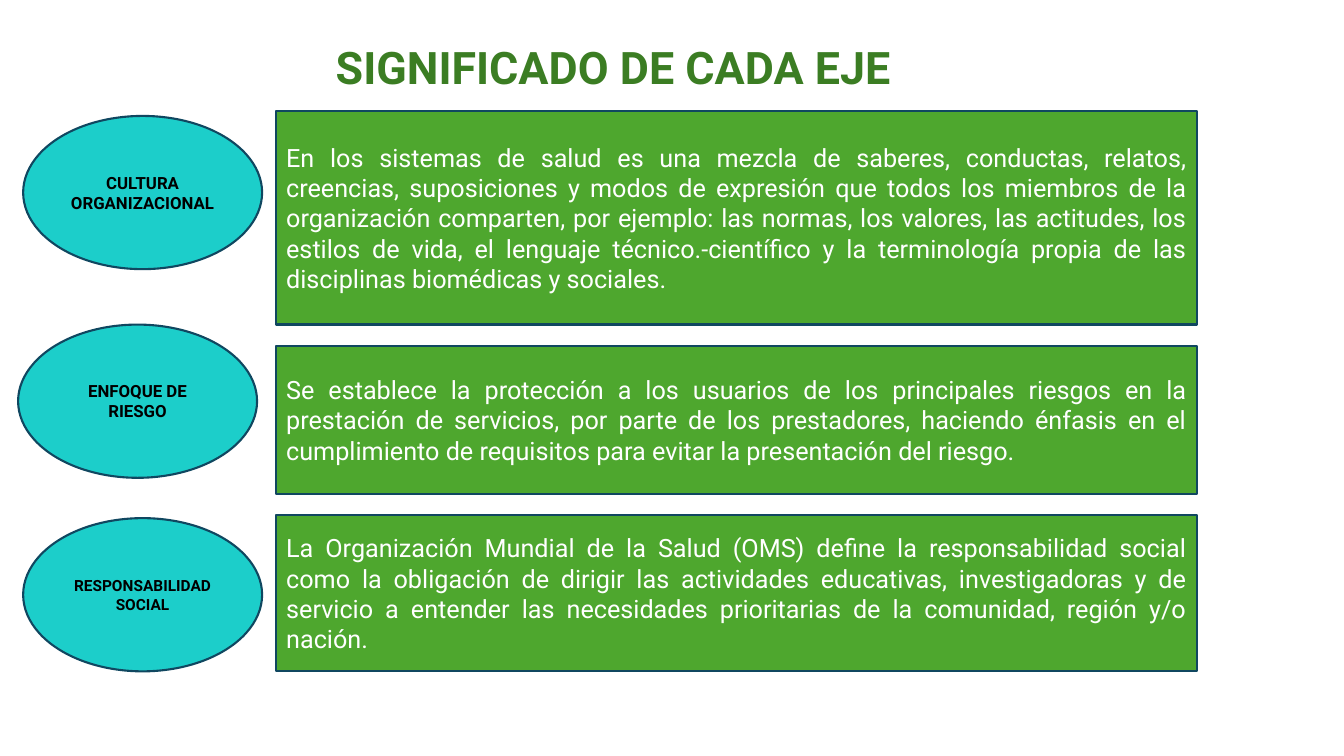
from dataclasses import dataclass

from pptx import Presentation
from pptx import util as u
from pptx.dml.color import RGBColor
from pptx.enum import shapes, text
from pptx.slide import Slide
from pptx.text.text import TextFrame

SCALE = 9144


@dataclass(frozen=True)
class Theme:
    font: str = "Roboto"
    title: str = "3B7D23"
    oval: str = "1CCECA"
    panel: str = "4EA72E"
    edge: str = "104760"
    dark: str = "000000"
    light: str = "FFFFFF"
    head: int = 32
    body: int = 18
    label: int = 12
    small: int = 11
    stroke: float = 1.5


@dataclass(frozen=True)
class Box:
    left: int
    top: int
    width: int
    height: int

    def emu(self) -> tuple[int, int, int, int]:
        return (self.left * SCALE, self.top * SCALE,
                self.width * SCALE, self.height * SCALE)


@dataclass(frozen=True)
class Axis:
    name: str
    size: int
    oval: Box
    sense: str
    panel: Box


THEME = Theme()


def oval_at(left: int, top: int) -> Box:
    return Box(left, top, 237, 152)


def panel_at(top: int, height: int) -> Box:
    return Box(274, top, 913, height)


AXES = [
    Axis("CULTURA ORGANIZACIONAL", THEME.label, oval_at(23, 115),
         "En los sistemas de salud es una mezcla de saberes, conductas, relatos, "
         "creencias, suposiciones y modos de expresión que todos los miembros de la "
         "organización comparten, por ejemplo: las normas, los valores, las actitudes, "
         "los estilos de vida, el lenguaje técnico.-científico y la terminología propia "
         "de las disciplinas biomédicas y sociales.",
         panel_at(110, 212)),
    Axis("ENFOQUE DE RIESGO", THEME.label, oval_at(18, 322),
         "Se establece la protección a los usuarios de los principales riesgos en la "
         "prestación de servicios, por parte de los prestadores, haciendo énfasis en el "
         "cumplimiento de requisitos para evitar la presentación del riesgo.",
         panel_at(343, 147)),
    Axis("RESPONSABILIDAD SOCIAL", THEME.small, oval_at(23, 514),
         "La Organización Mundial de la Salud (OMS) define la responsabilidad social "
         "como la obligación de dirigir las actividades educativas, investigadoras y de "
         "servicio a entender las necesidades prioritarias de la comunidad, región y/o "
         "nación.",
         panel_at(511, 155)),
]


def write(frame: TextFrame, words: str, *, size: int, color: str,
          align: text.PP_ALIGN, bold: bool = False, lead: float = 1.0) -> None:
    frame.word_wrap = True
    frame.auto_size = text.MSO_AUTO_SIZE.NONE
    frame.vertical_anchor = text.MSO_ANCHOR.MIDDLE
    para = frame.paragraphs[0]
    para.alignment = align
    para.line_spacing = lead
    run = para.add_run()
    run.text = words
    run.font.name = THEME.font
    run.font.size = u.Pt(size)
    run.font.bold = bold
    run.font.color.rgb = RGBColor.from_string(color)


def draw(slide: Slide, kind: shapes.MSO_SHAPE, box: Box, fill: str) -> TextFrame:
    shape = slide.shapes.add_shape(kind, *box.emu())
    shape.shadow.inherit = False
    shape.fill.solid()
    shape.fill.fore_color.rgb = RGBColor.from_string(fill)
    shape.line.color.rgb = RGBColor.from_string(THEME.edge)
    shape.line.width = u.Pt(THEME.stroke)
    return shape.text_frame


def main() -> None:
    deck = Presentation()
    deck.slide_width, deck.slide_height = 1333 * SCALE, 750 * SCALE
    slide = deck.slides.add_slide(deck.slide_layouts.get_by_name("Title Only"))

    title = slide.shapes.title
    title.left, title.top, title.width, title.height = Box(323, 29, 1043, 81).emu()
    write(title.text_frame, "SIGNIFICADO DE CADA EJE", size=THEME.head,
          color=THEME.title, align=text.PP_ALIGN.LEFT, bold=True, lead=0.9)

    for axis in AXES:
        panel = draw(slide, shapes.MSO_SHAPE.RECTANGLE, axis.panel, THEME.panel)
        write(panel, axis.sense, size=THEME.body, color=THEME.light,
              align=text.PP_ALIGN.JUSTIFY)
        oval = draw(slide, shapes.MSO_SHAPE.OVAL, axis.oval, THEME.oval)
        write(oval, axis.name, size=axis.size, color=THEME.dark,
              align=text.PP_ALIGN.CENTER, bold=True)

    deck.save("out.pptx")


if __name__ == "__main__":
    main()
